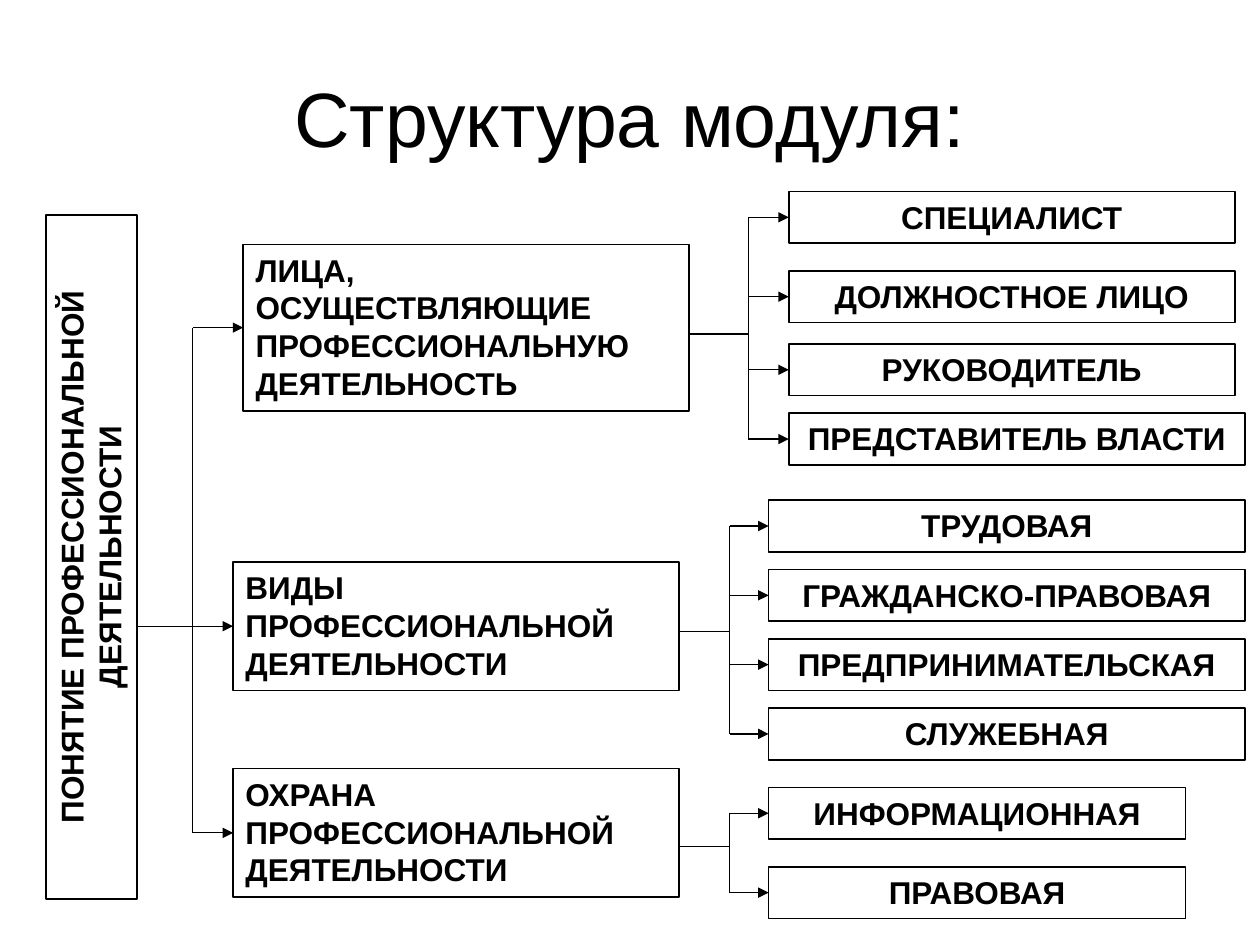
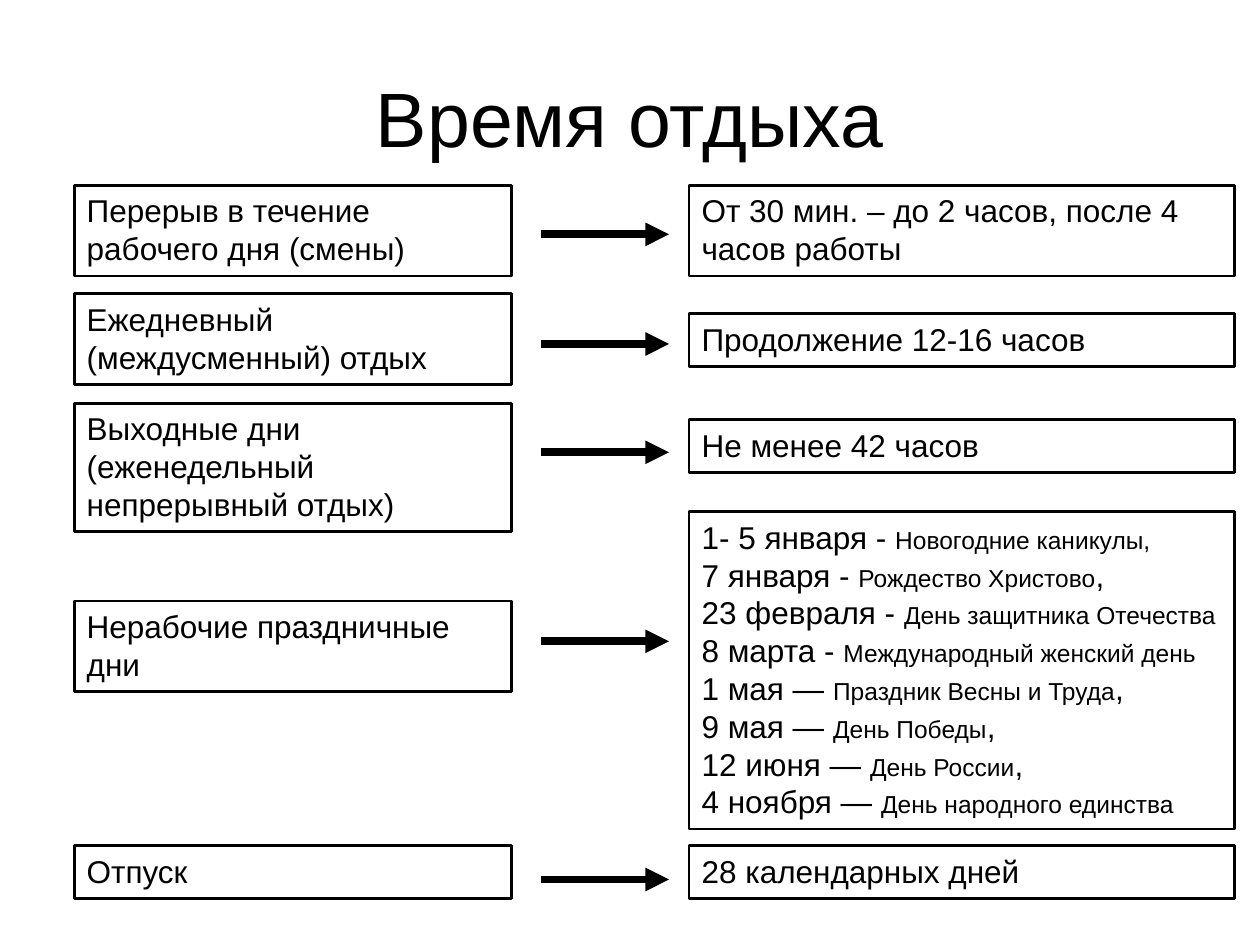
from dataclasses import dataclass

from lxml import etree
from pptx import Presentation
from pptx.dml.color import RGBColor
from pptx.enum.shapes import MSO_CONNECTOR, MSO_SHAPE
from pptx.enum.text import MSO_ANCHOR, MSO_AUTO_SIZE, PP_ALIGN
from pptx.oxml.ns import qn
from pptx.util import Emu, Pt

RECTANGLE = MSO_SHAPE.RECTANGLE
STRAIGHT = MSO_CONNECTOR.STRAIGHT
LEFT, CENTER = PP_ALIGN.LEFT, PP_ALIGN.CENTER
TOP, MIDDLE = MSO_ANCHOR.TOP, MSO_ANCHOR.MIDDLE
GROW = MSO_AUTO_SIZE.SHAPE_TO_FIT_TEXT
LEFT_SIDE = 1
TITLE_ONLY = 5
PX = 9144


@dataclass(frozen=True)
class Theme:
    """Colours, font, type sizes and line widths of the deck."""
    ink: RGBColor = RGBColor(0, 0, 0)
    font: str = "Arial"
    title: int = 44
    body: int = 18
    detail: int = 14
    tree_border: float = 1
    tree_line: float = 0.75
    rest_border: float = 1.5
    rest_arrow: float = 4.5


@dataclass(frozen=True)
class Box:
    """A region in px."""
    left: int
    top: int
    width: int
    height: int

    def inner(self, dx, dy, width, height):
        """Return a box placed relative to this one."""
        return Box(self.left + dx, self.top + dy, width, height)

    def emu(self):
        """Return left, top, width and height in EMU."""
        return [px(side) for side in (self.left, self.top, self.width, self.height)]


@dataclass(frozen=True)
class Branch:
    """A heading and its leaves, with offsets from the branch region."""
    region: Box
    heading: str
    heading_dy: int
    heading_height: int
    stub_dy: int
    trunk_dx: int
    leaf_dx: int
    leaves: tuple


THEME = Theme()
TITLE_BOX = Box(50, 30, 900, 125)
HEADING_WIDTH = 354
LEAF_HEIGHT = 41
ROOT_BOX = Box(36, 171, 72, 543)
ROOT_TEXT = "ПОНЯТИЕ ПРОФЕССИОНАЛЬНОЙ ДЕЯТЕЛЬНОСТИ"
SPINE_X = 153

BRANCHES = (
    Branch(Box(193, 152, 795, 217), "ЛИЦА, ОСУЩЕСТВЛЯЮЩИЕ ПРОФЕССИОНАЛЬНУЮ ДЕЯТЕЛЬНОСТЬ",
           42, 132, 113, 401, 433,
           (("СПЕЦИАЛИСТ", 0, 354), ("ДОЛЖНОСТНОЕ ЛИЦО", 63, 354),
            ("РУКОВОДИТЕЛЬ", 121, 354), ("ПРЕДСТАВИТЕЛЬ ВЛАСТИ", 176, 362))),
    Branch(Box(185, 397, 803, 206), "ВИДЫ ПРОФЕССИОНАЛЬНОЙ ДЕЯТЕЛЬНОСТИ",
           49, 102, 104, 394, 425,
           tuple((kind, 55 * row, 378) for row, kind in enumerate(
               ("ТРУДОВАЯ", "ГРАЖДАНСКО-ПРАВОВАЯ", "ПРЕДПРИНИМАТЕЛЬСКАЯ", "СЛУЖЕБНАЯ")))),
    Branch(Box(185, 610, 756, 119), "ОХРАНА ПРОФЕССИОНАЛЬНОЙ ДЕЯТЕЛЬНОСТИ",
           0, 102, 62, 394, 425,
           (("ИНФОРМАЦИОННАЯ", 15, 331), ("ПРАВОВАЯ", 78, 331))),
)

HOLIDAYS = (
    ("1- 5 января - ", "Новогодние каникулы,", ""),
    ("7 января - ", "Рождество Христово", ","),
    ("23 февраля - ", "День защитника Отечества", ""),
    ("8 марта - ", "Международный женский день", ""),
    ("1 мая — ", "Праздник Весны и Труда", ","),
    ("9 мая — ", "День Победы", ","),
    ("12 июня — ", "День России", ","),
    ("4 ноября — ", "День народного единства", ""),
)
HOLIDAY_SIZES = (THEME.body, THEME.detail, THEME.body)

REST_BOX = Box(59, 147, 921, 566)
REST_WIDTH, TERM_DX, TERM_WIDTH = 347, 488, 433
ARROW_START, ARROW_END = 370, 472


def px(length):
    """Turn px into EMU."""
    return Emu(length * PX)


def plain(text):
    """Return one paragraph holding one run of body text."""
    return [[(text, THEME.body)]]


REST_ROWS = (
    (plain("Перерыв в течение рабочего дня (смены)"), 0, 72,
     plain("От 30 мин. – до 2 часов, после 4 часов работы"), 0, 72, 39),
    (plain("Ежедневный (междусменный) отдых"), 86, 72,
     plain("Продолжение 12-16 часов"), 102, 42, 126),
    (plain("Выходные дни (еженедельный непрерывный отдых)"), 173, 102,
     plain("Не менее 42 часов"), 186, 42, 212),
    (plain("Нерабочие праздничные дни"), 330, 72,
     [list(zip(holiday, HOLIDAY_SIZES)) for holiday in HOLIDAYS], 259, 252, 362),
    (plain("Отпуск"), 524, 42,
     plain("28 календарных дней"), 524, 42, 551),
)


def write(frame, paragraphs, align, bold=False):
    """Fill a text frame run by run."""
    frame.word_wrap = True
    for index, runs in enumerate(paragraphs):
        paragraph = frame.add_paragraph() if index else frame.paragraphs[0]
        paragraph.alignment = align
        for text, size in runs:
            if text:
                run = paragraph.add_run()
                run.text = text
                run.font.name = THEME.font
                run.font.size = Pt(size)
                run.font.bold = bold
                run.font.color.rgb = THEME.ink


def add_panel(slide, box, paragraphs, border, align=LEFT, bold=False, rotation=0):
    """Draw an outlined rectangle with text."""
    panel = slide.shapes.add_shape(RECTANGLE, *box.emu())
    panel.rotation = rotation
    panel.shadow.inherit = False
    panel.fill.background()
    panel.line.color.rgb = THEME.ink
    panel.line.width = Pt(border)
    panel.text_frame.vertical_anchor = TOP
    write(panel.text_frame, paragraphs, align, bold)
    panel.text_frame.auto_size = GROW
    return panel


def add_line(slide, start, end, width, arrow=False):
    """Draw a straight line between two points in EMU."""
    line = slide.shapes.add_connector(STRAIGHT, *start, *end)
    line.line.color.rgb = THEME.ink
    line.line.width = Pt(width)
    if arrow:
        etree.SubElement(line.line._get_or_add_ln(), qn("a:tailEnd"), type="triangle")
    etree.SubElement(line._element.spPr, qn("a:effectLst"))
    return line


def middle(panel):
    """Return the height of a panel's centre in EMU."""
    return panel.top + panel.height // 2


def add_fork(slide, x, panels, starts=None):
    """Draw a vertical trunk and an arrow from it into each panel."""
    add_line(slide, (px(x), middle(panels[0])), (px(x), middle(panels[-1])), THEME.tree_line)
    for panel, start in zip(panels, starts or [x] * len(panels)):
        y = middle(panel)
        arrow = add_line(slide, (px(start), y), (panel.left, y), THEME.tree_line, arrow=True)
        arrow.end_connect(panel, LEFT_SIDE)


def add_branch(slide, branch):
    """Draw one heading with its leaves and return the heading."""
    region = branch.region
    heading = add_panel(
        slide, region.inner(0, branch.heading_dy, HEADING_WIDTH, branch.heading_height),
        plain(branch.heading), THEME.tree_border, bold=True)
    leaves = [add_panel(slide, region.inner(branch.leaf_dx, dy, width, LEAF_HEIGHT),
                        plain(text), THEME.tree_border, CENTER, bold=True)
              for text, dy, width in branch.leaves]
    trunk_x = region.left + branch.trunk_dx
    stub_y = px(region.top + branch.stub_dy)
    add_line(slide, (heading.left + heading.width, stub_y), (px(trunk_x), stub_y),
             THEME.tree_line)
    add_fork(slide, trunk_x, leaves)
    return heading


def add_root(slide, box):
    """Draw the root panel, turned to read upwards inside its box."""
    shift = (box.height - box.width) // 2
    flat = box.inner(-shift, shift, box.height, box.width)
    add_panel(slide, flat, plain(ROOT_TEXT), THEME.tree_border, CENTER, True, rotation=270)


def add_rest_table(slide, area):
    """Draw the kinds of rest, each with an arrow to its length."""
    for kind, kind_dy, kind_height, term, term_dy, term_height, arrow_dy in REST_ROWS:
        add_panel(slide, area.inner(0, kind_dy, REST_WIDTH, kind_height), kind,
                  THEME.rest_border)
        add_panel(slide, area.inner(TERM_DX, term_dy, TERM_WIDTH, term_height), term,
                  THEME.rest_border)
        y = px(area.top + arrow_dy)
        add_line(slide, (px(area.left + ARROW_START), y), (px(area.left + ARROW_END), y),
                 THEME.rest_arrow, arrow=True)


def add_titled_slide(deck, title):
    """Add a slide with a formatted title."""
    slide = deck.slides.add_slide(deck.slide_layouts[TITLE_ONLY])
    heading = slide.shapes.title
    heading.left, heading.top, heading.width, heading.height = TITLE_BOX.emu()
    heading.text_frame.vertical_anchor = MIDDLE
    write(heading.text_frame, [[(title, THEME.title)]], CENTER)
    return slide


def add_module_slide(deck):
    """Build the tree of the module's topics."""
    slide = add_titled_slide(deck, "Структура модуля:")
    add_root(slide, ROOT_BOX)
    headings = [add_branch(slide, branch) for branch in BRANCHES]
    root_edge = ROOT_BOX.left + ROOT_BOX.width
    add_fork(slide, SPINE_X, headings, (SPINE_X, root_edge, SPINE_X))


def add_rest_slide(deck):
    """Build the slide on rest time."""
    add_rest_table(add_titled_slide(deck, "Время отдыха"), REST_BOX)


def main():
    """Build and save the deck."""
    deck = Presentation()
    deck.slide_width, deck.slide_height = px(1000), px(750)
    add_module_slide(deck)
    add_rest_slide(deck)
    deck.save("out.pptx")


if __name__ == "__main__":
    main()
